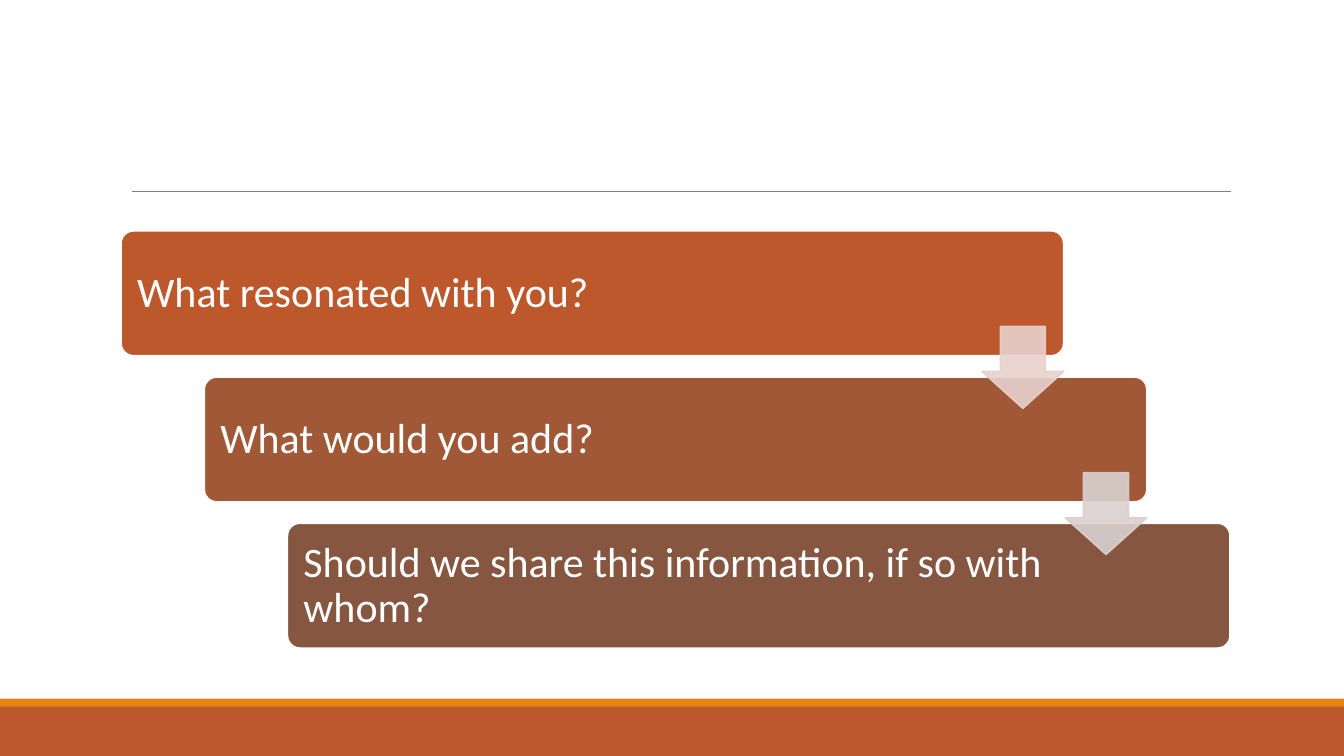
from pptx import Presentation
from pptx.dml.color import RGBColor
from pptx.enum.shapes import MSO_CONNECTOR, MSO_SHAPE
from pptx.enum.text import MSO_ANCHOR
from pptx.oxml.ns import qn
from pptx.util import Inches, Pt
from lxml import etree

RECT = MSO_SHAPE.RECTANGLE
ROUNDED = MSO_SHAPE.ROUNDED_RECTANGLE
DOWN_ARROW = MSO_SHAPE.DOWN_ARROW
STRAIGHT = MSO_CONNECTOR.STRAIGHT
MIDDLE = MSO_ANCHOR.MIDDLE

COLORS = {
    "white": "FFFFFF", "rule": "808080", "orange": "E48312", "rust": "BD582C",
    "sienna": "A05837", "brown": "865640", "pink": "E8D1CD", "gray": "D9D1CF",
}


class Deck:
    font = "Calibri"
    size = Pt(30)
    inset = Inches(0.12)

    def __init__(self, slide):
        self.s = slide

    def color(self, name):
        return RGBColor.from_string(COLORS[name])

    def shape(self, kind, x, y, w, h, fill, line=None, adj=()):
        sp = self.s.shapes.add_shape(kind, Inches(x), Inches(y), Inches(w), Inches(h))
        sp.shadow.inherit = False
        for i, value in enumerate(adj):
            sp.adjustments[i] = value
        sp.fill.solid()
        sp.fill.fore_color.rgb = self.color(fill)
        if line:
            sp.line.color.rgb = self.color(line)
            sp.line.width = Pt(1.25)
        else:
            sp.line.fill.background()
        return sp

    def arrow(self, x, y, size, fill):
        sp = self.shape(DOWN_ARROW, x, y, size, size, fill, fill, (0.55, 0.45))
        # 90 % opacity for fill and outline
        for clr in sp._element.spPr.iter(qn("a:srgbClr")):
            etree.SubElement(clr, qn("a:alpha"), val="90000")

    def rule(self, x1, x2, y):
        line = self.s.shapes.add_connector(
            STRAIGHT, Inches(x1), Inches(y), Inches(x2), Inches(y))
        line.line.color.rgb = self.color("rule")
        line.line.width = Pt(0.5)
        etree.SubElement(line._element.spPr, qn("a:effectLst"))

    def text(self, x, y, w, h, words):
        box = self.s.shapes.add_textbox(Inches(x), Inches(y), Inches(w), Inches(h))
        tf = box.text_frame
        tf.word_wrap = True
        tf.vertical_anchor = MIDDLE
        tf.margin_left = tf.margin_right = self.inset
        tf.margin_top = tf.margin_bottom = self.inset
        p = tf.paragraphs[0]
        p.line_spacing = 0.9
        r = p.add_run()
        r.text = words
        r.font.name = self.font
        r.font.size = self.size
        r.font.color.rgb = self.color("white")


def main():
    prs = Presentation()
    prs.slide_width, prs.slide_height = Inches(13.33), Inches(7.5)
    deck = Deck(prs.slides.add_slide(prs.slide_layouts[6]))

    # Footer bands and header rule
    deck.shape(RECT, 0, 7, 13.33, 0.5, "rust")
    deck.shape(RECT, 0, 6.93, 13.33, 0.08, "orange")
    deck.rule(1.31, 12.21, 1.9)

    # Staircase of questions
    left, top, step_x, step_y = 1.2, 2.29, 0.825, 1.45
    questions = [
        ("What resonated with you?", "rust", 8.01),
        ("What would you add?", "sienna", 7.64),
        ("Should we share this information, if so with whom?", "brown", 7.64),
    ]
    for i, (words, fill, text_w) in enumerate(questions):
        x, y = left + i * step_x, top + i * step_y
        deck.shape(ROUNDED, x, y, 9.35, 1.24, fill, "white", (0.1,))
        deck.text(x + 0.04, y + 0.04, text_w, 1.17, words)

    # Arrows from each step to the next
    for i, fill in enumerate(("pink", "gray")):
        deck.arrow(left + 8.54 + i * step_x, top + 0.95 + i * step_y, 0.81, fill)

    prs.save("out.pptx")


if __name__ == "__main__":
    main()
